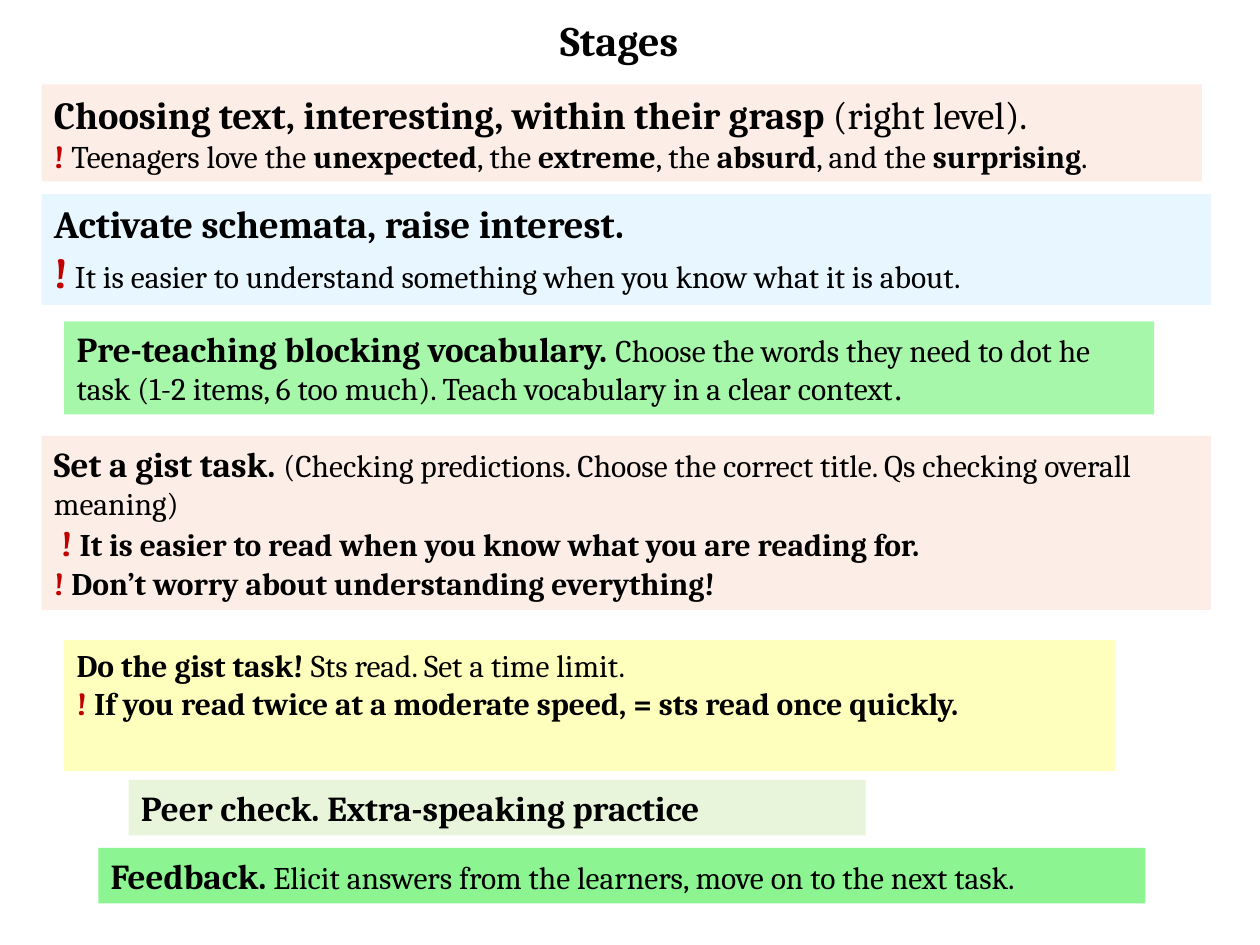
from pptx import Presentation
from pptx.dml.color import RGBColor
from pptx.enum.shapes import MSO_SHAPE
from pptx.enum.text import MSO_ANCHOR, PP_ALIGN
from pptx.util import Inches, Pt

COLORS = {"ink": "000000", "alert": "C00000", "peach": "FDEDE7", "sky": "E7F6FF",
          "mint": "A7F7AB", "lemon": "FFFFBD", "sage": "E9F5DB", "green": "8CF491"}
WIDTH, HEIGHT = Inches(10), Inches(7.5)

B = {"bold": True}
HEAD = {"size": 20, "bold": True}
BIG = {"size": 22, "bold": True}
ALERT = {"bold": True, "color": "alert"}

TITLE = ((22, 0.93, 54.3, 6.67), [[("Stages", {"size": 24, "bold": True})]])

STAGES = [
    ("peach", (3.3, 8.93, 92.1, 10.27), [
        [("Choosing text, interesting, within their grasp ", BIG),
         ("(right level).", {"size": 22})],
        [("! ", ALERT), ("Teenagers love the ", {}), ("unexpected", B), (", the ", {}),
         ("extreme", B), (", the ", {}), ("absurd", B), (", and the ", {}),
         ("surprising", B), (".", {})]]),
    ("sky", (3.3, 20.53, 92.8, 11.73), [
        [("Activate schemata, raise interest.", BIG)],
        [("!", {**ALERT, "size": 24}),
         (" It is easier to understand something when you know what it is about.", {})]]),
    ("mint", (5.1, 34, 86.5, 9.87), [
        [("Pre-teaching blocking vocabulary. ", HEAD),
         ("Choose the words they need to dot he task (1-2 items, 6 too much). "
          "Teach vocabulary in a clear context", {}),
         (".", {"font": "TeX Gyre Bonum"})]]),
    ("peach", (3.3, 46.13, 92.8, 18.4), [
        [("Set a gist task. ", HEAD),
         ("(Checking predictions. Choose the correct title. "
          "Qs checking overall meaning)", {})],
        [(" ", B), ("!", {**ALERT, "size": 20}),
         (" It is easier to read when you know what you are reading for.", B)],
        [("! ", ALERT), ("Don’t worry about understanding everything!", B)]]),
    ("lemon", (5.1, 67.73, 83.4, 13.87), [
        [("Do the gist task! ", B), ("Sts read. Set a time limit.", {})],
        [("! ", ALERT),
         ("If you read twice at a moderate speed, = sts read once quickly.", B)]]),
    ("sage", (10.2, 82.53, 58.5, 5.87), [[("Peer check. Extra-speaking practice", HEAD)]]),
    ("green", (7.8, 89.73, 83.1, 5.87), [
        [("Feedback.", HEAD), (" ", B),
         ("Elicit answers from the learners, move on to the next task.", {})]]),
]


def add_run(p, text, size=18, bold=False, color="ink", font="Cambria"):
    r = p.add_run()
    r.text = text
    r.font.size, r.font.bold, r.font.name = Pt(size), bold, font
    r.font.color.rgb = RGBColor.from_string(COLORS[color])


def place(box):
    """Turn percentages of the slide into left, top, width and height."""
    return [round(share * side / 100) for share, side in zip(box, (WIDTH, HEIGHT) * 2)]


def write(sp, paragraphs, align):
    tf = sp.text_frame
    tf.word_wrap = True
    tf.vertical_anchor = MSO_ANCHOR.TOP
    for i, runs in enumerate(paragraphs):
        p = tf.add_paragraph() if i else tf.paragraphs[0]
        p.alignment = align
        for text, style in runs:
            add_run(p, text, **style)


def main():
    prs = Presentation()
    prs.slide_width, prs.slide_height = WIDTH, HEIGHT
    s = prs.slides.add_slide(prs.slide_layouts[6])
    for fill, box, paragraphs in STAGES:
        sp = s.shapes.add_shape(MSO_SHAPE.RECTANGLE, *place(box))
        sp.shadow.inherit = False
        sp.fill.solid()
        sp.fill.fore_color.rgb = RGBColor.from_string(COLORS[fill])
        sp.line.fill.background()
        write(sp, paragraphs, PP_ALIGN.LEFT)
    box, paragraphs = TITLE
    write(s.shapes.add_textbox(*place(box)), paragraphs, PP_ALIGN.CENTER)
    prs.save("out.pptx")


if __name__ == "__main__":
    main()
